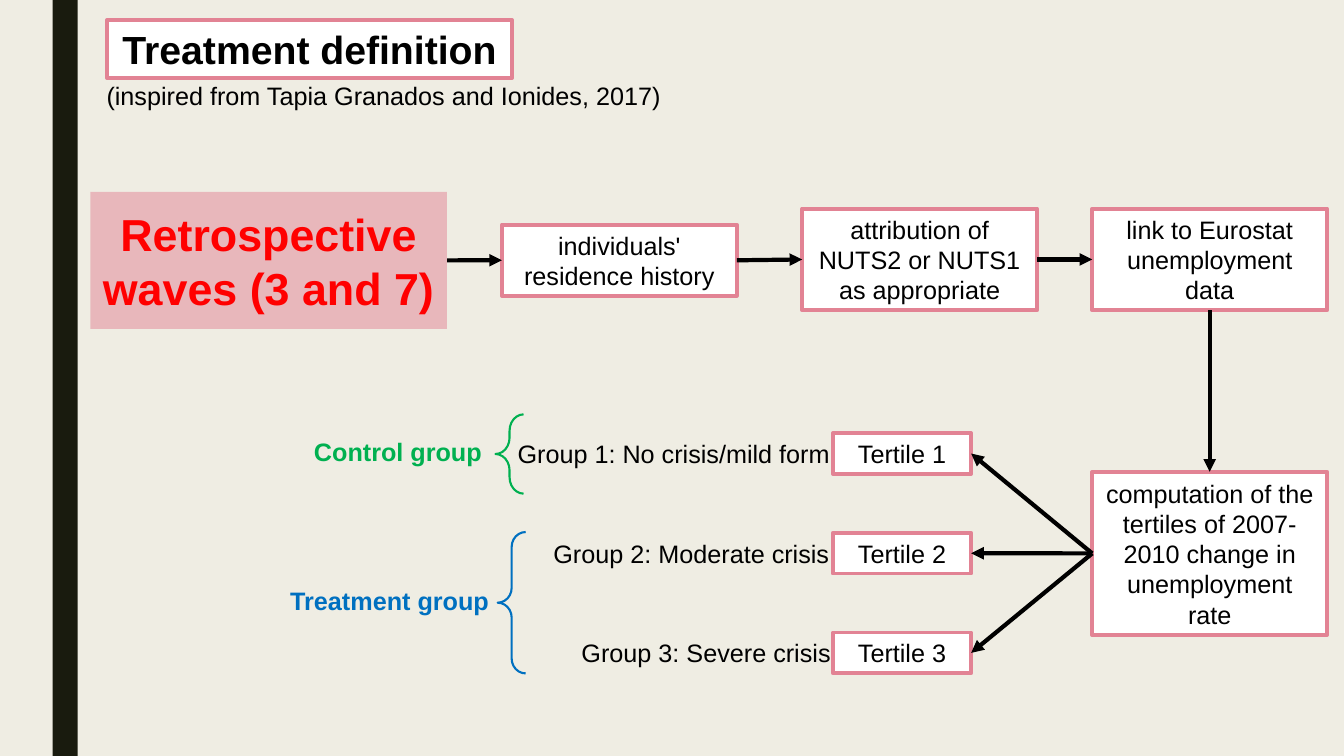
from lxml import etree
from pptx import Presentation
from pptx.dml.color import RGBColor
from pptx.enum.shapes import MSO_CONNECTOR as Connector, MSO_SHAPE as Shape
from pptx.enum.text import MSO_ANCHOR as Anchor, MSO_AUTO_SIZE as AutoSize, PP_ALIGN as Align
from pptx.oxml.ns import qn
from pptx.util import Pt


def color(code):
    return RGBColor.from_string(code)


def write(shape, text, size=18, ink="000000", bold=False, align=Align.CENTER, wrap=True):
    frame = shape.text_frame
    frame.text = text
    frame.word_wrap = wrap
    frame.auto_size = AutoSize.NONE
    frame.vertical_anchor = Anchor.MIDDLE
    para = frame.paragraphs[0]
    para.alignment = align
    font = para.runs[0].font
    font.name, font.size, font.bold = "Arial", Pt(size), bold
    font.color.rgb = color(ink)


deck = Presentation()
deck.slide_width, deck.slide_height = Pt(960), Pt(540)
page = deck.slides.add_slide(deck.slide_layouts[5])
page.background.fill.solid()
page.background.fill.fore_color.rgb = color("EFEDE3")

title = page.shapes.title
title.left, title.top, title.width, title.height = Pt(76.3), Pt(14.4), Pt(289.5), Pt(41.2)
title.fill.solid()
title.fill.fore_color.rgb = color("FFFFFF")
title.line.color.rgb = color("E28394")
title.line.width = Pt(2.75)
write(title, "Treatment definition", 28, bold=True)

band = page.shapes.add_shape(Shape.RECTANGLE, Pt(37.5), 0, Pt(18), Pt(540))
waves = page.shapes.add_shape(Shape.RECTANGLE, Pt(64.5), Pt(137), Pt(254.8), Pt(98))
for panel, fill in [(band, "191B0E"), (waves, "E28394")]:
    panel.shadow.inherit = False
    panel.fill.solid()
    panel.fill.fore_color.rgb = color(fill)
    panel.line.fill.background()
tint = waves.fill._xPr.find(qn("a:solidFill"))[0]
etree.SubElement(tint, qn("a:alpha"), val="50000")
write(waves, "Retrospective waves (3 and 7)", 32, "FF0000", True)

steps = [
    ("individuals' residence history", 358.5, 160.5, 167.8, 50.9),
    ("attribution of NUTS2 or NUTS1 as appropriate", 573, 149, 167.8, 72.7),
    ("link to Eurostat unemployment data", 780.2, 149, 167.8, 72.7),
    ("computation of the tertiles of 2007-2010 change in unemployment rate",
     780.2, 337, 167.8, 116.6),
]
tertile_tops = [309.4 + 71.2 * row for row in range(3)]
steps += [(f"Tertile {row}", 595, top, 98.7, 29.1) for row, top in enumerate(tertile_tops, 1)]
boxes = []
for text, left, top, width, height in steps:
    box = page.shapes.add_shape(Shape.RECTANGLE, Pt(left), Pt(top), Pt(width), Pt(height))
    box.shadow.inherit = False
    box.fill.solid()
    box.fill.fore_color.rgb = color("FFFFFF")
    box.line.color.rgb = color("E28394")
    box.line.width = Pt(2.75)
    write(box, text)
    boxes.append(box)

history, regions, unemployment, change, *tertiles = boxes
links = [
    (waves, 3, history, 1),
    (history, 3, regions, 1),
    (regions, 3, unemployment, 1),
    (unemployment, 2, change, 0),
]
links += [(change, 1, tertile, 3) for tertile in tertiles]
for source, exit_side, target, entry_side in links:
    arrow = page.shapes.add_connector(Connector.STRAIGHT, 0, 0, 0, 0)
    arrow.begin_connect(source, exit_side)
    arrow.end_connect(target, entry_side)
    arrow.line.color.rgb = color("000000")
    arrow.line.width = Pt(3)
    etree.SubElement(arrow.line._get_or_add_ln(), qn("a:tailEnd"), type="triangle")
    etree.SubElement(arrow._element.spPr, qn("a:effectLst"))

labels = [
    ("Group 1: No crisis/mild form", 362.6, tertile_tops[0], 240, "000000", False),
    ("Group 2: Moderate crisis", 388.2, tertile_tops[1], 213, "000000", False),
    ("Group 3: Severe crisis", 408.3, tertile_tops[2], 194, "000000", False),
    ("Control group", 217.2, 307.6, 135.4, "00B050", True),
    ("Treatment group", 200.2, 414.2, 157.7, "0070C0", True),
    ("(inspired from Tapia Granados and Ionides, 2017)", 69, 53.6, 414, "000000", False),
]
for text, left, top, width, ink, bold in labels:
    label = page.shapes.add_textbox(Pt(left), Pt(top), Pt(width), Pt(29.1))
    write(label, text, ink=ink, bold=bold, align=Align.LEFT, wrap=False)

braces = [(354, 296, 56.6, 0.586, "00B050"), (355.5, 380, 101, 0.533, "0070C0")]
for left, top, height, curve, ink in braces:
    brace = page.shapes.add_shape(Shape.LEFT_BRACE, Pt(left), Pt(top), Pt(20), Pt(height))
    brace.shadow.inherit = False
    brace.adjustments[0] = curve
    brace.fill.background()
    brace.line.color.rgb = color(ink)
    brace.line.width = Pt(1.5)

deck.save("out.pptx")
